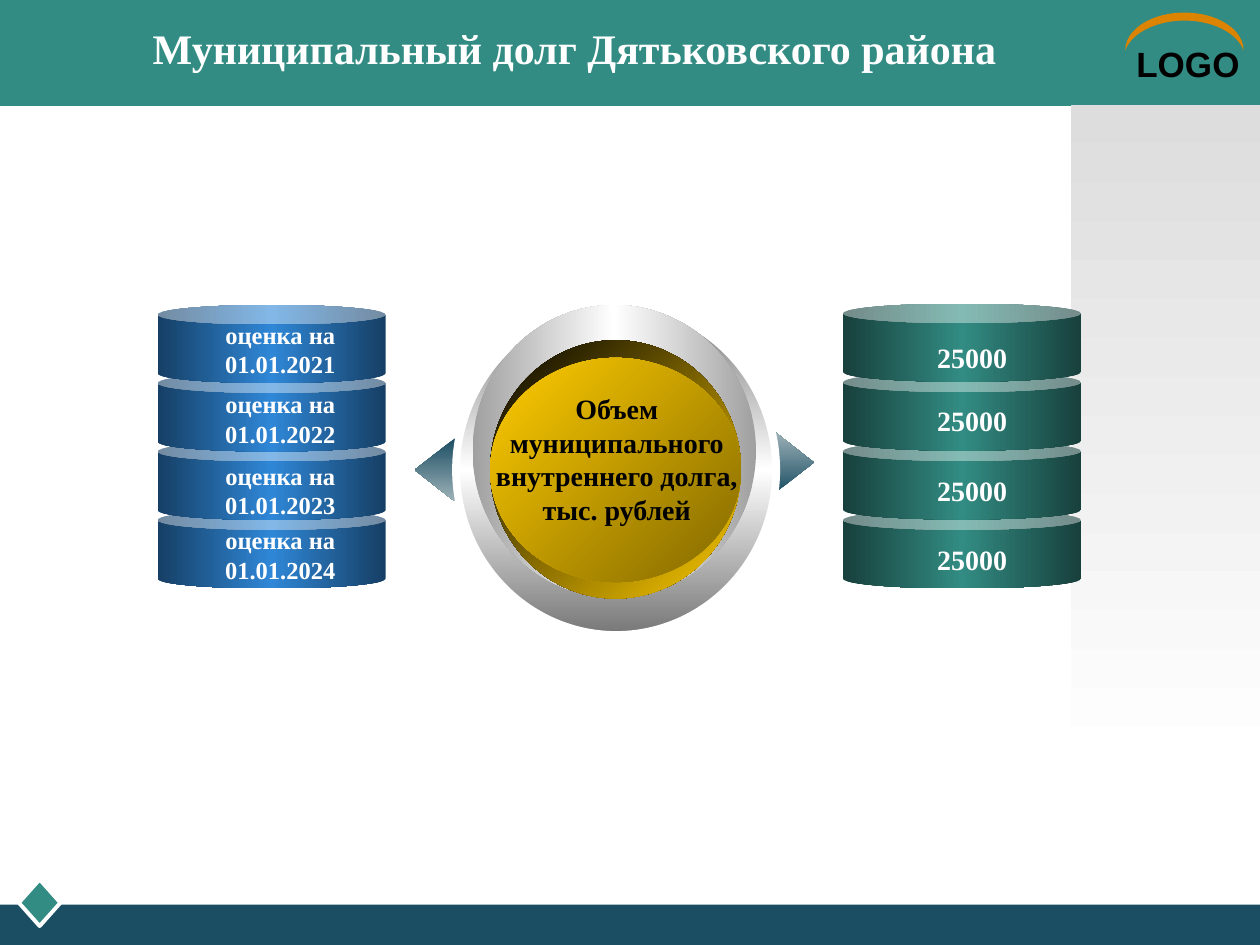
from pptx import Presentation
from pptx import util as u
from pptx.dml.color import RGBColor
from pptx.enum import shapes as sh, text as tx
from pptx.oxml import parse_xml
from pptx.oxml.ns import nsdecls

Inches = u.Inches
KIND = sh.MSO_SHAPE
SERIF = "Times New Roman"
TEAL, NAVY, WHITE, BLACK = "328C83", "1B4E63", "FFFFFF", "000000"
BLUES = ["163F65", "2F87D7", "163F65"]
GREENS = ["18403C", TEAL, "18403C"]


def color(code):
    return RGBColor.from_string(code)


def shade(shape, codes, angle):
    """Fill with evenly spaced gradient stops; the angle runs clockwise."""
    last = len(codes) - 1
    stops = "".join(
        f'<a:gs pos="{100000 * i // last}"><a:srgbClr val="{code}"/></a:gs>'
        for i, code in enumerate(codes))
    grad = parse_xml(
        f'<a:gradFill {nsdecls("a")} rotWithShape="1"><a:gsLst>{stops}</a:gsLst>'
        f'<a:lin ang="{angle * 60000}" scaled="1"/></a:gradFill>')
    shape._element.spPr.find(
        "{http://schemas.openxmlformats.org/drawingml/2006/main}prstGeom").addnext(grad)


def draw(slide, kind, box, fill, angle=0, line=None, width=1, turn=0, adj=()):
    shape = slide.shapes.add_shape(kind, *map(Inches, box))
    shape.shadow.inherit = False
    shape.rotation = turn
    for i, value in enumerate(adj):
        shape.adjustments[i] = value
    if line:
        shape.line.color.rgb = color(line)
        shape.line.width = u.Pt(width)
    else:
        shape.line.fill.background()
    if isinstance(fill, list):
        shade(shape, fill, angle)
    else:
        shape.fill.solid()
        shape.fill.fore_color.rgb = color(fill)
    return shape


def write(slide, box, words, size=16, ink=WHITE, face=SERIF, wrap=True,
          align=tx.PP_ALIGN.CENTER):
    frame = slide.shapes.add_textbox(*map(Inches, box)).text_frame
    frame.word_wrap = wrap
    for i, row in enumerate(words.split("\n")):
        para = frame.paragraphs[0] if i == 0 else frame.add_paragraph()
        para.alignment = align
        run = para.add_run()
        run.text = row
        run.font.size = u.Pt(size)
        run.font.bold = True
        run.font.name = face
        run.font.color.rgb = color(ink)


def frame_page(slide, wide, high):
    # Bands, corner diamond and side panel
    draw(slide, KIND.RECTANGLE, (0, 0, wide, 0.84), TEAL)
    draw(slide, KIND.RECTANGLE, (0, high - 0.32, wide, 0.32), NAVY)
    draw(slide, KIND.DIAMOND, (0.15, high - 0.52, 0.33, 0.37), TEAL,
         line=WHITE, width=2.25)
    draw(slide, KIND.RECTANGLE, (wide - 1.5, 0.83, 1.5, 5.25), ["DDDDDD", WHITE], 90)
    # Placeholder mark
    write(slide, (wide - 1.08, 0.29, 1.08, 0.43), "LOGO", size=20, ink=BLACK,
          face="Arial", align=tx.PP_ALIGN.LEFT)
    draw(slide, KIND.MOON, (wide - 0.75, -0.22, 0.3, 0.94), "DC8300",
         turn=90, adj=[0.212])
    # Title
    write(slide, (0.06, 0.13, 9, 0.81), "Муниципальный долг Дятьковского района",
          size=24)


def draw_hub(slide, x, y, words):
    # Side arrows
    for left, top, turn in ((-0.42, 1.15, 270), (2.43, 1.09, 90)):
        arrow = draw(slide, KIND.UP_ARROW, (x + left, y + top, 0.5, 0.32),
                     [NAVY, "9FB3B9"], turn=turn, adj=[0.517, 1])
        arrow._element.spPr.xfrm.set("flipH", "1")
    # Rings and gold disc, from the outside in
    draw(slide, KIND.OVAL, (x, y, 2.54, 2.62), ["777777", WHITE, "777777"], 90,
         line=WHITE, width=4.5)
    draw(slide, KIND.OVAL, (x + 0.13, y, 2.25, 2.32), ["A0A0A0", WHITE, "A0A0A0"])
    draw(slide, KIND.OVAL, (x + 0.27, y + 0.28, 1.99, 2.05), [BLACK, "FFCC00"], 45)
    draw(slide, KIND.OVAL, (x + 0.27, y + 0.42, 1.99, 1.78), ["FFCC00", "826800"], 45)
    write(slide, (x + 0.2, y + 0.64, 2.15, 1.18), words, ink=BLACK, wrap=False)


def draw_stack(slide, box, fill, labels, offset, **style):
    """Overlapping cans, lowest first, with a (top, words) label for each."""
    x, y, wide, high = box
    can = 0.62
    step = (high - can) / (len(labels) - 1)
    for i in reversed(range(len(labels))):
        draw(slide, KIND.CAN, (x, y + i * step, wide, can), fill, adj=[0.25])
    for top, words in labels:
        write(slide, (x + offset, y + top, wide, 0.4), words, **style)


def main():
    deck = Presentation()
    deck.slide_width, deck.slide_height = Inches(10), Inches(7.5)
    slide = deck.slides.add_slide(deck.slide_layouts[6])

    frame_page(slide, 10, 7.5)
    draw_hub(slide, 3.62, 2.42, "Объем\nмуниципального\nвнутреннего долга,\nтыс. рублей")
    dates = [(top, f"оценка на\n01.01.{year}") for top, year in
             zip((0.07, 0.62, 1.19, 1.7), range(2021, 2025))]
    draw_stack(slide, (1.25, 2.42, 1.81, 2.25), BLUES, dates, 0.07, size=14)
    sums = [(top, "25000") for top in (0.24, 0.74, 1.3, 1.85)]
    draw_stack(slide, (6.69, 2.41, 1.89, 2.26), GREENS, sums, 0.08)

    deck.save("out.pptx")


if __name__ == "__main__":
    main()
